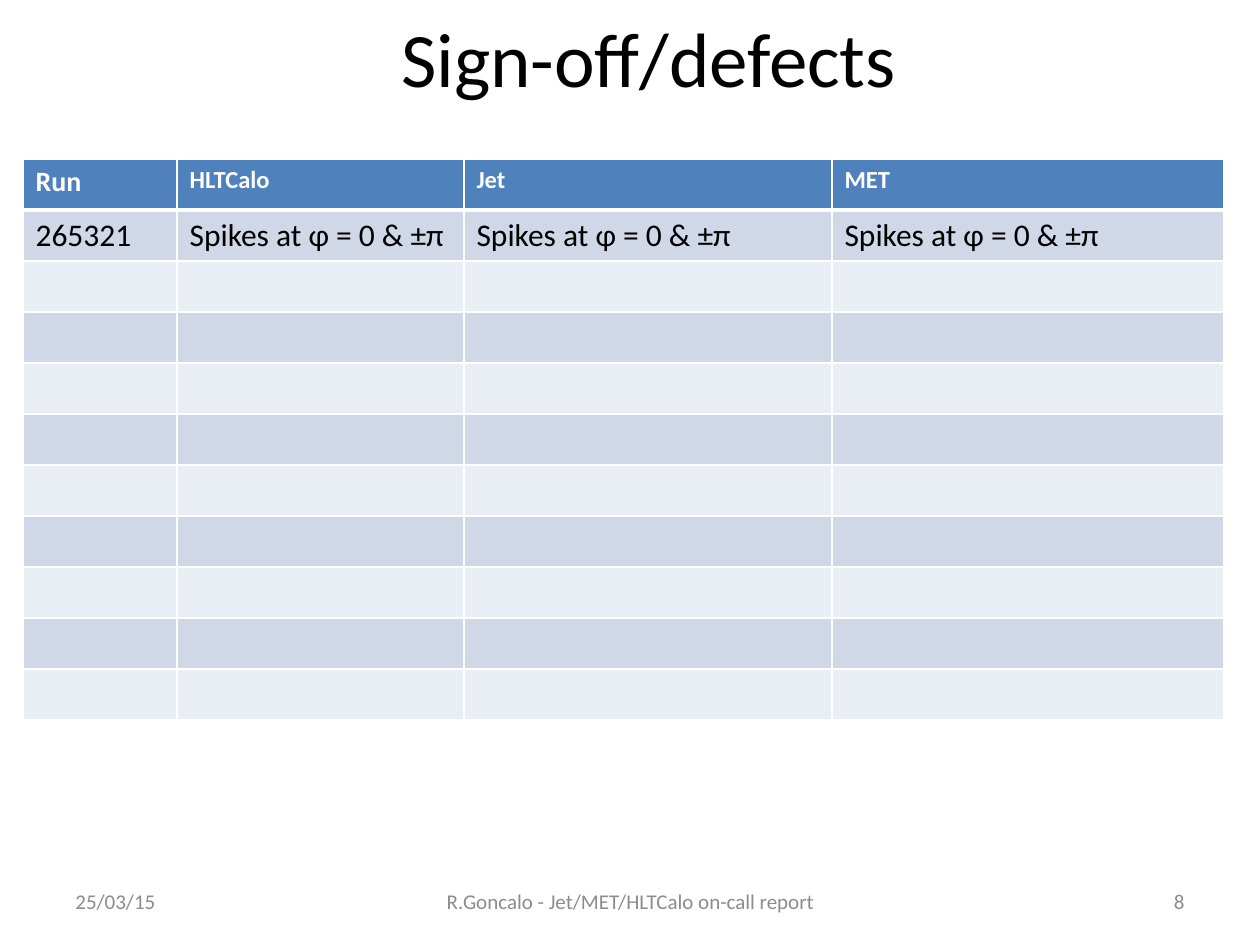
"""Build the sign-off and defects slide with its run table."""
from lxml import etree
from pptx import Presentation
from pptx import util as u
from pptx.dml.color import RGBColor
from pptx.enum import text
from pptx.oxml import ns

SCALE = 914400 / 126
BLACK = RGBColor(0x00, 0x00, 0x00)
WHITE = RGBColor(0xFF, 0xFF, 0xFF)
GREY = RGBColor(0x8C, 0x8C, 0x8C)
BLUE = RGBColor(0x4F, 0x81, 0xBD)
BAND_DARK = RGBColor(0xD0, 0xD8, 0xE8)
BAND_LIGHT = RGBColor(0xE9, 0xED, 0xF4)
LEFT, CENTER, RIGHT = text.PP_ALIGN.LEFT, text.PP_ALIGN.CENTER, text.PP_ALIGN.RIGHT


def px(length):
    return u.Emu(round(length * SCALE))


def write(para, wording, color, **formats):
    span = para.add_run()
    span.text = wording
    span.font.color.rgb = color
    for name, value in {"name": "Calibri", **formats}.items():
        setattr(span.font, name, value)


deck = Presentation()
deck.slide_width, deck.slide_height = px(1260), px(945)
page = deck.slides.add_slide(deck.slide_layouts[6])

labels = [
    ("Sign-off/defects", (310, 0, 678, 113), 44, BLACK, CENTER),
    ("25/03/15", (63, 876, 294, 50), 12, GREY, LEFT),
    ("R.Goncalo - Jet/MET/HLTCalo on-call report", (431, 876, 399, 50), 12, GREY, CENTER),
    ("8", (903, 876, 294, 50), 12, GREY, RIGHT),
]
for wording, place, size, color, align in labels:
    box = page.shapes.add_textbox(*map(px, place))
    box.text_frame.word_wrap = True
    box.text_frame.vertical_anchor = text.MSO_ANCHOR.MIDDLE
    para = box.text_frame.paragraphs[0]
    para.alignment = align
    write(para, wording, color, size=u.Pt(size))

headings = ["Run", "HLTCalo", "Jet", "MET"]
findings = ["265321"] + ["Spikes at φ = 0 & ±π"] * 3
widths = [154, 287, 368, 392]
row_count, row_height = 11, 51

frame = page.shapes.add_table(
    row_count, len(widths), px(23), px(159), px(sum(widths)), px(row_count * row_height)
)
table = frame.table
for column, width in zip(table.columns, widths):
    column.width = px(width)

for r, row in enumerate(table.rows):
    row.height = px(row_height)
    for c, cell in enumerate(row.cells):
        props = cell._tc.get_or_add_tcPr()
        borders = {"lnL": 1, "lnR": 1, "lnT": 3 if r == 1 else 1, "lnB": 3 if r == 0 else 1}
        for side, points in borders.items():
            line = etree.SubElement(props, ns.qn(f"a:{side}"), w=str(u.Pt(points)))
            paint = etree.SubElement(line, ns.qn("a:solidFill"))
            etree.SubElement(paint, ns.qn("a:srgbClr"), val=str(WHITE))
        cell.fill.solid()
        cell.fill.fore_color.rgb = BLUE if r == 0 else BAND_DARK if r % 2 else BAND_LIGHT
        para = cell.text_frame.paragraphs[0]
        if r == 0:
            write(para, headings[c], WHITE, size=u.Pt(14 if c else 16), bold=True)
        elif r == 1:
            write(para, findings[c], BLACK, size=u.Pt(18), bold=False)

deck.save("out.pptx")
